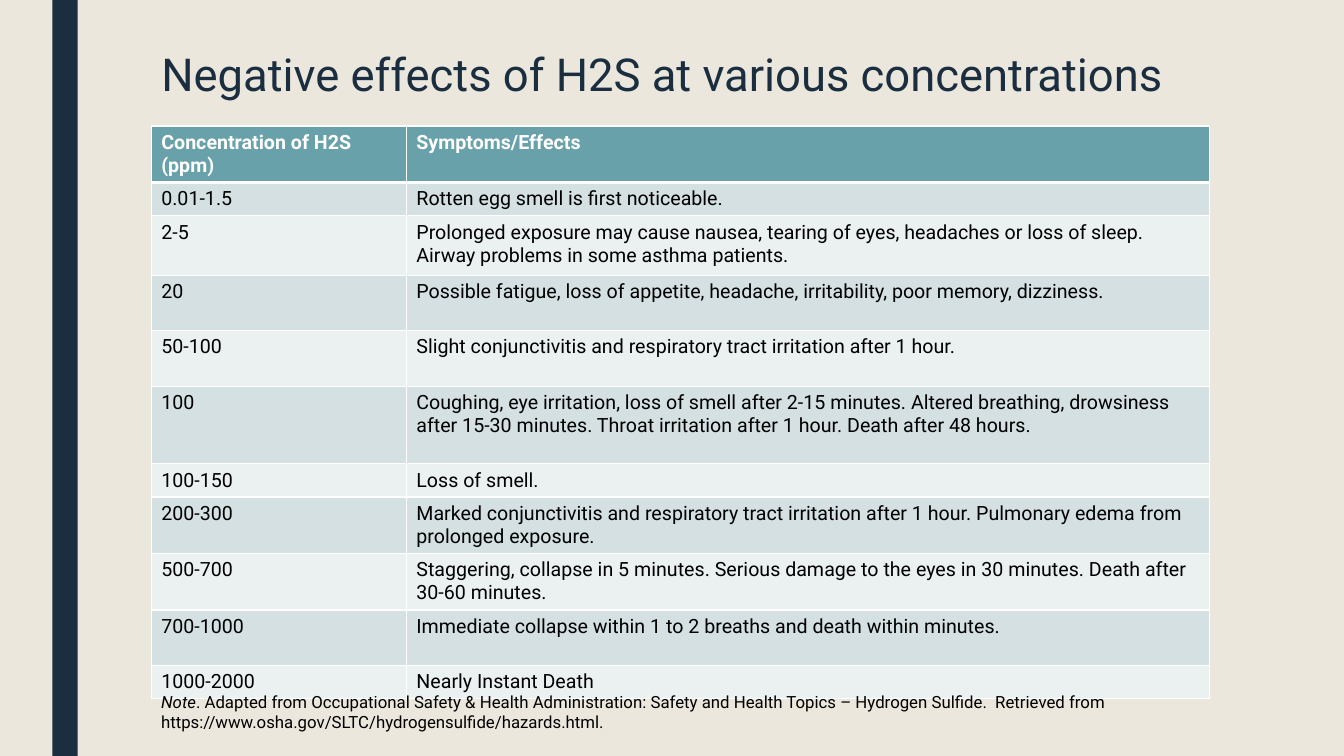
"""Build a slide with a table of hydrogen sulfide effects by concentration."""
import dataclasses

import lxml.etree
import pptx
import pptx.dml.color
import pptx.enum.shapes
import pptx.enum.text
import pptx.oxml.ns
import pptx.util

Inches = pptx.util.Inches
Pt = pptx.util.Pt


@dataclasses.dataclass(frozen=True)
class Theme:
    font: str = "Roboto"
    background: str = "EBE7DD"
    navy: str = "1A2E40"
    header: str = "69A1AB"
    bands: tuple = ("D4E0E2", "EBF0F1")
    white: str = "FFFFFF"
    black: str = "000000"
    title_size: float = 32.4
    table_size: float = 14
    note_size: float = 12
    border: float = 1
    header_border: float = 3


HEADINGS = ("Concentration of H2S (ppm)", "Symptoms/Effects")
HEADER_HEIGHT = 0.56
COLUMN_WIDTHS = (2.53, 7.97)
EFFECTS = [
    ("0.01-1.5", "Rotten egg smell is first noticeable.", 0.33),
    ("2-5", "Prolonged exposure may cause nausea, tearing of eyes, headaches or loss of sleep. "
            "Airway problems in some asthma patients.", 0.59),
    ("20", "Possible fatigue, loss of appetite, headache, irritability, poor memory, dizziness.", 0.55),
    ("50-100", "Slight conjunctivitis and respiratory tract irritation after 1 hour.", 0.55),
    ("100", "Coughing, eye irritation, loss of smell after 2-15 minutes. Altered breathing, drowsiness "
            "after 15-30 minutes. Throat irritation after 1 hour. Death after 48 hours.", 0.77),
    ("100-150", "Loss of smell.", 0.33),
    ("200-300", "Marked conjunctivitis and respiratory tract irritation after 1 hour. Pulmonary edema "
                "from prolonged exposure.", 0.56),
    ("500-700", "Staggering, collapse in 5 minutes. Serious damage to the eyes in 30 minutes. Death "
                "after 30-60 minutes.", 0.56),
    ("700-1000", "Immediate collapse within 1 to 2 breaths and death within minutes.", 0.55),
    ("1000-2000", "Nearly Instant Death", 0.33),
]
NOTE = (". Adapted from Occupational Safety & Health Administration: Safety and Health Topics – "
        "Hydrogen Sulfide.  Retrieved from https://www.osha.gov/SLTC/hydrogensulfide/hazards.html.")


def rgb(value):
    return pptx.dml.color.RGBColor.from_string(value)


def add_text(para, text, *, font, size, color, bold=False, italic=False):
    span = para.add_run()
    span.text = text
    span.font.name = font
    span.font.size = Pt(size)
    span.font.color.rgb = rgb(color)
    span.font.bold = bold
    span.font.italic = italic


def set_borders(cell, color, **widths):
    properties = cell._tc.get_or_add_tcPr()
    for index, (side, width) in enumerate(widths.items()):
        line = lxml.etree.Element(pptx.oxml.ns.qn(f"a:ln{side}"), w=str(Pt(width)))
        fill = lxml.etree.SubElement(line, pptx.oxml.ns.qn("a:solidFill"))
        lxml.etree.SubElement(fill, pptx.oxml.ns.qn("a:srgbClr"), val=color)
        properties.insert(index, line)


class SlideBuilder:
    def __init__(self, deck, theme):
        self.theme = theme
        self.slide = deck.slides.add_slide(deck.slide_layouts[5])
        fill = self.slide.background.fill
        fill.solid()
        fill.fore_color.rgb = rgb(theme.background)

    def bar(self, left, top, width, height):
        bar = self.slide.shapes.add_shape(
            pptx.enum.shapes.MSO_SHAPE.RECTANGLE,
            Inches(left), Inches(top), Inches(width), Inches(height))
        bar.shadow.inherit = False
        bar.fill.solid()
        bar.fill.fore_color.rgb = rgb(self.theme.navy)
        bar.line.fill.background()

    def title(self, text, left, top, width, height):
        box = self.slide.shapes.title
        box.left, box.top, box.width, box.height = map(Inches, (left, top, width, height))
        frame = box.text_frame
        frame.word_wrap = True
        frame.auto_size = pptx.enum.text.MSO_AUTO_SIZE.NONE
        frame.vertical_anchor = pptx.enum.text.MSO_ANCHOR.TOP
        para = frame.paragraphs[0]
        para.alignment = pptx.enum.text.PP_ALIGN.LEFT
        para.line_spacing = 0.89
        add_text(para, text, font=self.theme.font, size=self.theme.title_size, color=self.theme.navy)

    def table(self, headings, rows, heights, widths, left, top):
        theme = self.theme
        table = self.slide.shapes.add_table(
            len(heights), len(widths), Inches(left), Inches(top),
            Inches(sum(widths)), Inches(sum(heights))).table
        table.horz_banding = False
        for column, width in zip(table.columns, widths):
            column.width = Inches(width)
        for index, (texts, height) in enumerate(zip([headings, *rows], heights)):
            table.rows[index].height = Inches(height)
            is_header = index == 0
            fill = theme.header if is_header else theme.bands[(index - 1) % 2]
            for cell, text in zip(table.rows[index].cells, texts):
                cell.fill.solid()
                cell.fill.fore_color.rgb = rgb(fill)
                set_borders(cell, theme.white, L=theme.border, R=theme.border,
                            T=theme.header_border if index == 1 else theme.border,
                            B=theme.header_border if is_header else theme.border)
                add_text(cell.text_frame.paragraphs[0], text, font=theme.font, size=theme.table_size,
                         color=theme.white if is_header else theme.black, bold=is_header)

    def note(self, label, text, left, top, width, height):
        box = self.slide.shapes.add_textbox(Inches(left), Inches(top), Inches(width), Inches(height))
        box.text_frame.word_wrap = True
        box.text_frame.auto_size = pptx.enum.text.MSO_AUTO_SIZE.SHAPE_TO_FIT_TEXT
        para = box.text_frame.paragraphs[0]
        style = dict(font=self.theme.font, size=self.theme.note_size, color=self.theme.black)
        add_text(para, label, italic=True, **style)
        add_text(para, text, **style)


def main():
    deck = pptx.Presentation()
    deck.slide_width, deck.slide_height = Inches(13.33), Inches(7.5)
    builder = SlideBuilder(deck, Theme())
    builder.bar(0.52, 0, 0.25, 7.5)
    builder.title("Negative effects of H2S at various concentrations", 1.5, 0.47, 10.5, 0.78)
    rows = [(level, effect) for level, effect, _ in EFFECTS]
    heights = [HEADER_HEIGHT] + [height for _, _, height in EFFECTS]
    builder.table(HEADINGS, rows, heights, COLUMN_WIDTHS, 1.5, 1.25)
    builder.note("Note", NOTE, 1.5, 6.81, 10.4, 0.5)
    deck.save("out.pptx")


if __name__ == "__main__":
    main()
